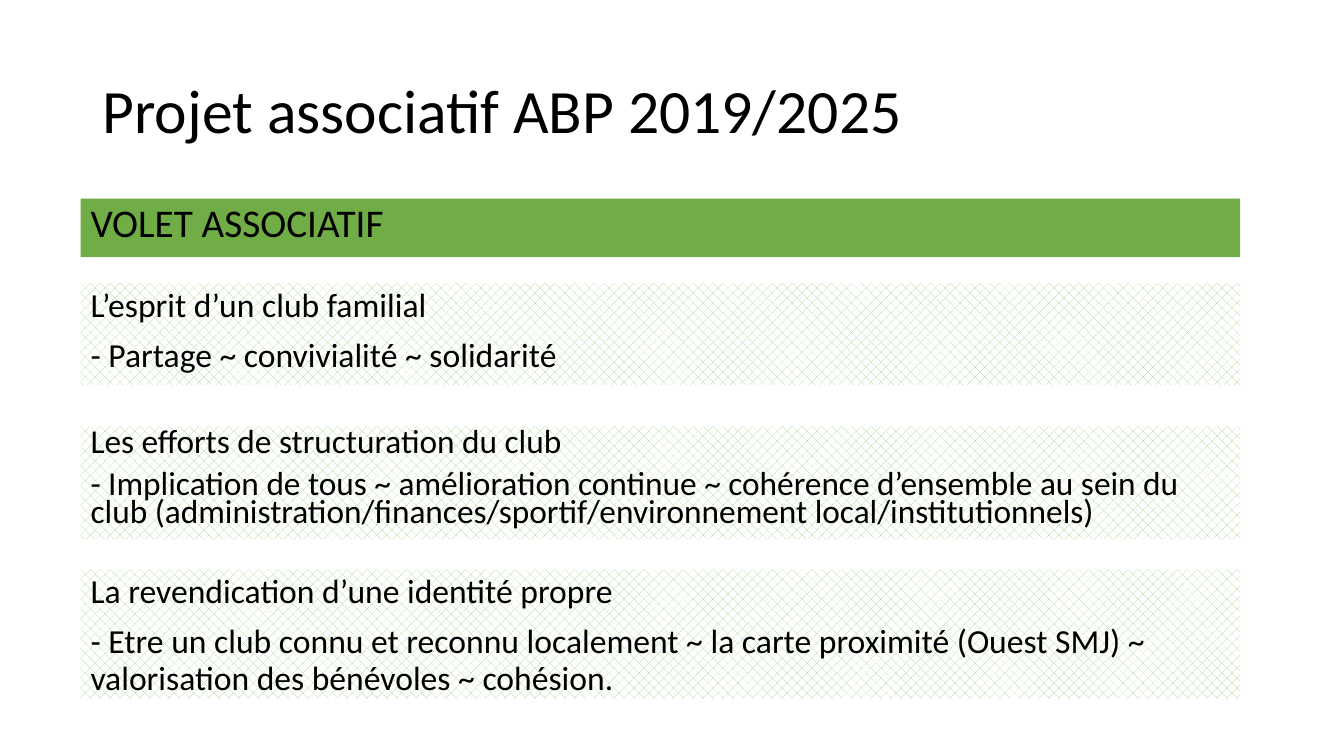
from dataclasses import dataclass

from pptx import Presentation
from pptx import util as u
from pptx.dml.color import RGBColor
from pptx.enum import dml, shapes, text


@dataclass(frozen=True)
class Theme:
    font: str = "Calibri"
    ink: str = "000000"
    paper: str = "FFFFFF"
    band: str = "70AD47"
    hatch: str = "A9D18E"
    title: float = 44
    head: float = 28
    body: float = 24
    tight: float = 23.8


THEME = Theme()
LEFT, WIDTH = 0.8, 11.5

# top, height, type size, line spacing, lines
PANELS = [
    (2.81, 1.01, THEME.body, 0.9, [
        "L’esprit d’un club familial",
        "- Partage ~ convivialité ~ solidarité",
    ]),
    (4.23, 1.12, THEME.tight, 0.7, [
        "Les efforts de structuration du club",
        "- Implication de tous ~ amélioration continue ~ cohérence d’ensemble "
        "au sein du club (administration/finances/sportif/environnement "
        "local/institutionnels)",
    ]),
    (5.65, 1.28, THEME.body, 0.9, [
        "La revendication d’une identité propre",
        "- Etre un club connu et reconnu localement ~ la carte proximité "
        "(Ouest SMJ) ~ valorisation des bénévoles ~ cohésion.",
    ]),
]


def assign(item, values):
    for name, value in values.items():
        setattr(item, name, value)


def write(shape, lines, size, spacing=0.9, before=10, anchor="TOP"):
    frame = shape.text_frame
    assign(frame, {
        "text": "\n".join(lines),
        "word_wrap": True,
        "vertical_anchor": text.MSO_ANCHOR[anchor],
    })
    for para in frame.paragraphs:
        assign(para, {
            "alignment": text.PP_ALIGN.LEFT,
            "line_spacing": spacing,
            "space_before": u.Pt(before),
        })
        for run in para.runs:
            assign(run.font, {"name": THEME.font, "size": u.Pt(size)})
            run.font.color.rgb = RGBColor.from_string(THEME.ink)


def add_title(slide, words):
    box = slide.shapes.add_textbox(
        u.Inches(0.92), u.Inches(0.4), u.Inches(WIDTH), u.Inches(1.45))
    write(box, [words], THEME.title, before=0, anchor="MIDDLE")


def add_box(slide, top, height):
    box = slide.shapes.add_shape(
        shapes.MSO_SHAPE.RECTANGLE, u.Inches(LEFT), u.Inches(top),
        u.Inches(WIDTH), u.Inches(height))
    box.shadow.inherit = False
    box.line.fill.background()
    return box


def add_band(slide, words):
    box = add_box(slide, 1.97, 0.58)
    box.fill.solid()
    box.fill.fore_color.rgb = RGBColor.from_string(THEME.band)
    write(box, [words], THEME.head)


def add_panel(slide, top, height, size, spacing, lines):
    box = add_box(slide, top, height)
    box.fill.patterned()
    box.fill.pattern = dml.MSO_PATTERN.PERCENT_30
    box.fill.fore_color.rgb = RGBColor.from_string(THEME.hatch)
    box.fill.back_color.rgb = RGBColor.from_string(THEME.paper)
    write(box, lines, size, spacing)


def main():
    deck = Presentation()
    assign(deck, {"slide_width": u.Inches(13.33), "slide_height": u.Inches(7.5)})
    slide = deck.slides.add_slide(deck.slide_layouts[6])
    add_title(slide, "Projet associatif ABP 2019/2025")
    add_band(slide, "VOLET ASSOCIATIF")
    for panel in PANELS:
        add_panel(slide, *panel)
    deck.save("out.pptx")


if __name__ == "__main__":
    main()
